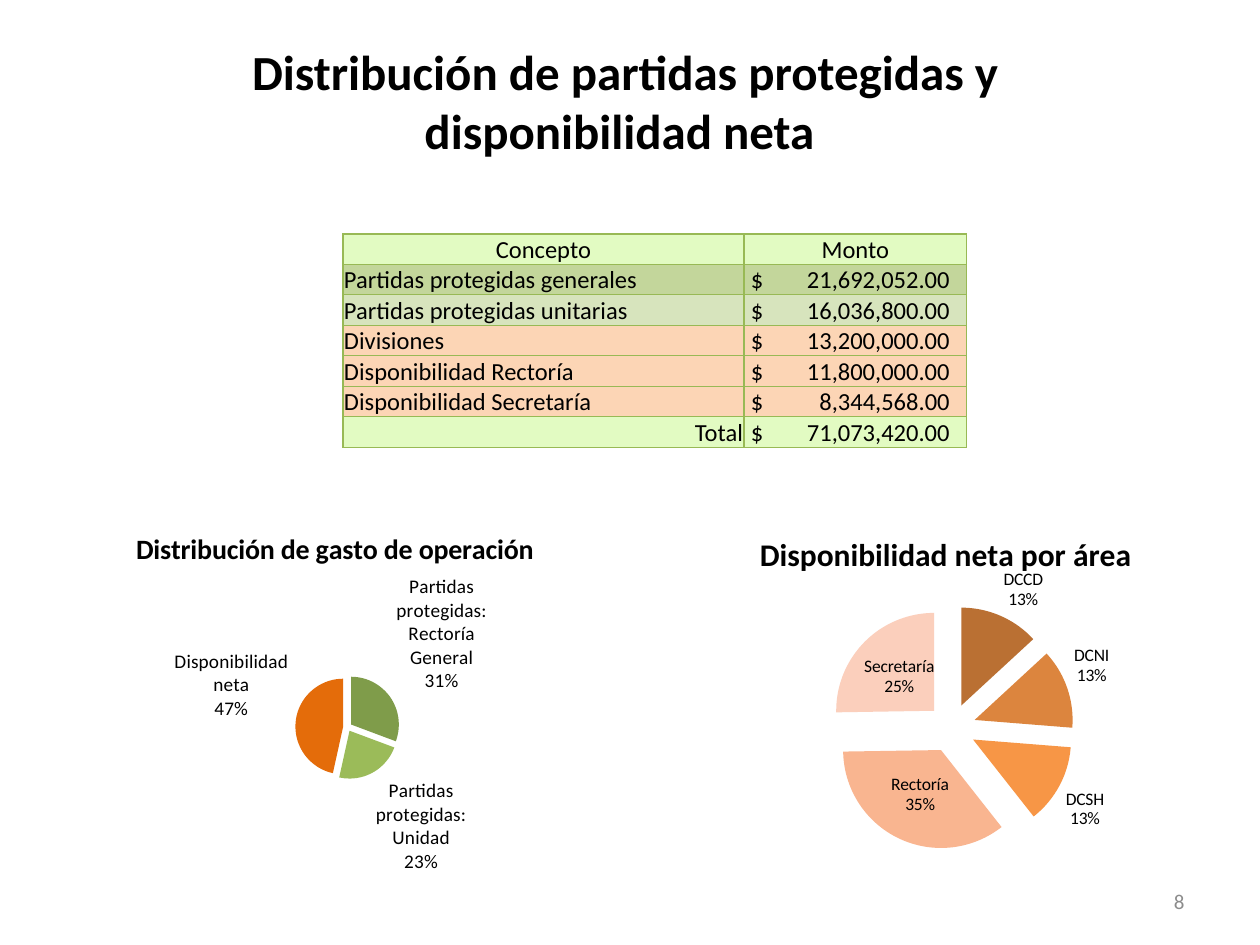
from pptx import Presentation
from pptx.chart.data import CategoryChartData
from pptx.dml.color import RGBColor
from pptx.enum.chart import XL_CHART_TYPE, XL_LABEL_POSITION
from pptx.enum.text import MSO_ANCHOR, PP_ALIGN
from pptx.oxml import parse_xml
from pptx.oxml.ns import nsdecls, qn
from pptx.util import Pt
from lxml import etree

PX = 914400 // 126
LEFT, CENTER, RIGHT = PP_ALIGN.LEFT, PP_ALIGN.CENTER, PP_ALIGN.RIGHT
MIDDLE, BOTTOM = MSO_ANCHOR.MIDDLE, MSO_ANCHOR.BOTTOM
OUTSIDE, INSIDE = XL_LABEL_POSITION.OUTSIDE_END, XL_LABEL_POSITION.CENTER
FONT = "Calibri"
C = {
    "black": "000000", "grey": "8C8C8C", "border": "98B955",
    "pale": "E2FBC2", "green": "C3D69B", "sage": "D7E4BD", "peach": "FCD5B5",
}


def style(font, size, color="black", bold=False):
    font.name, font.size, font.bold = FONT, Pt(size), bold
    font.color.rgb = RGBColor.from_string(C[color])


def layout(frame, x, y, w=0, h=0):
    """Manual chart layout from slide px, as fractions of the chart frame."""
    fx, fy, fw, fh = frame
    parts = [("x", (x - fx) / fw), ("y", (y - fy) / fh)]
    if w:
        parts += [("w", w / fw), ("h", h / fh)]
    target = '<c:layoutTarget val="inner"/>' if w else ""
    modes = '<c:xMode val="edge"/><c:yMode val="edge"/>'
    values = "".join(f'<c:{k} val="{v:.3f}"/>' for k, v in parts)
    return parse_xml(f'<c:layout {nsdecls("c")}><c:manualLayout>{target}{modes}{values}'
                     '</c:manualLayout></c:layout>')


prs = Presentation()
prs.slide_width, prs.slide_height = 1260 * PX, 945 * PX
s = prs.slides.add_slide(prs.slide_layouts[6])

# Title and page number
for text, box, size, color, bold, align, top in [
    ("Distribución de partidas protegidas y disponibilidad neta ",
     (94, 20, 1062, 145), 28, "black", True, CENTER, 21),
    ("8", (903, 876, 294, 50), 12, "grey", False, RIGHT, 6),
]:
    tf = s.shapes.add_textbox(*[v * PX for v in box]).text_frame
    tf.word_wrap = True
    tf.vertical_anchor = MIDDLE
    tf.margin_top, tf.margin_bottom = top * PX, 6 * PX
    p = tf.paragraphs[0]
    p.text, p.alignment = text, align
    style(p.font, size, color, bold)

# Table of amounts
rows = [
    ("Concepto", "Monto", "pale"),
    ("Partidas protegidas generales", "21,692,052.00", "green"),
    ("Partidas protegidas unitarias", "16,036,800.00", "sage"),
    ("Divisiones", "13,200,000.00", "peach"),
    ("Disponibilidad Rectoría", "11,800,000.00", "peach"),
    ("Disponibilidad Secretaría", "8,344,568.00", "peach"),
    ("Total", "71,073,420.00", "pale"),
]
table = s.shapes.add_table(len(rows), 2, 343 * PX, 234 * PX, 624 * PX, 210 * PX).table
for col, width in zip(table.columns, (401, 223)):
    col.width = width * PX
for i, (concept, amount, fill) in enumerate(rows):
    table.rows[i].height = 30 * PX
    for j, text in enumerate((concept, amount)):
        cell = table.cell(i, j)
        money = i > 0 and j == 1
        cell.margin_left = (7 if money else 1) * PX
        cell.margin_right = cell.margin_top = PX
        cell.margin_bottom = 0
        cell.vertical_anchor = BOTTOM
        cell.fill.solid()
        cell.fill.fore_color.rgb = RGBColor.from_string(C[fill])
        p = cell.text_frame.paragraphs[0]
        p.text = f"$\t{text}" if money else text
        p.alignment = CENTER if i == 0 else RIGHT if concept == text == "Total" else LEFT
        if money:
            tabs = etree.SubElement(p._p.get_or_add_pPr(), qn("a:tabLst"))
            etree.SubElement(tabs, qn("a:tab"), pos=str(199 * PX), algn="r")
        style(p.font, 14)
        for k, side in enumerate(("lnL", "lnR", "lnT", "lnB")):
            cell._tc.get_or_add_tcPr().insert(k, parse_xml(
                f'<a:{side} {nsdecls("a")} w="9525"><a:solidFill>'
                f'<a:srgbClr val="{C["border"]}"/></a:solidFill></a:{side}>'))

# Pie charts: frame, title, title place, pie box, label size, explosion, slices
pies = [
    ((15, 503, 630, 378), "Distribución de gasto de operación", 16, (131, 525),
     (300, 679, 96, 96), 11, 9, [
         ("Partidas protegidas: Rectoría General", 31, "7F9C4A", OUTSIDE),
         ("Partidas protegidas: Unidad", 23, "9BBB59", OUTSIDE),
         ("Disponibilidad neta", 47, "E46C0A", OUTSIDE)]),
    ((625, 503, 630, 378), "Disponibilidad neta por área", 18, (754, 527),
     (854, 630, 196, 196), 10, 25, [
         ("DCCD", 13, "BA7033", OUTSIDE), ("DCNI", 13, "DC853E", OUTSIDE),
         ("DCSH", 13, "F79646", OUTSIDE), ("Rectoría", 35, "F9B590", INSIDE),
         ("Secretaría", 25, "FBCFBC", INSIDE)]),
]
for frame, title, title_size, title_at, pie_box, size, explosion, slices in pies:
    data = CategoryChartData()
    data.categories = [name for name, *_ in slices]
    data.add_series("Series 1", [value for _, value, *_ in slices])
    chart = s.shapes.add_chart(XL_CHART_TYPE.PIE, *[v * PX for v in frame], data).chart
    chart.has_legend = False
    style(chart.font, size)

    chart.has_title = True
    tf = chart.chart_title.text_frame
    tf.text = title
    style(tf.paragraphs[0].font, title_size, bold=True)
    plot = chart.plots[0]
    title_el = chart.chart_title._element
    area = plot._element.getparent()
    for el in (title_el, area):
        for old in el.findall(qn("c:layout")):
            el.remove(old)
    title_el.find(qn("c:tx")).addnext(layout(frame, *title_at))
    area.insert(0, layout(frame, *pie_box))

    plot.vary_by_categories = True
    for i, (_, _, color, place) in enumerate(slices):
        point = plot.series[0].points[i]
        fill = point.format.fill
        fill.solid()
        fill.fore_color.rgb = RGBColor.from_string(color)
        for dpt in plot.series[0]._element.findall(qn("c:dPt")):
            if dpt.find(qn("c:explosion")) is None:
                dpt.find(qn("c:spPr")).addprevious(
                    parse_xml(f'<c:explosion {nsdecls("c")} val="{explosion}"/>'))
        label = point.data_label
        style(label.font, size)
        label.position = place
        dlbl = label._dLbl
        for tag, shown in (("showVal", 0), ("showCatName", 1), ("showPercent", 1)):
            dlbl.find(qn(f"c:{tag}")).set("val", str(shown))
        dlbl.find(qn("c:showLegendKey")).set("val", "0")
        etree.SubElement(dlbl, qn("c:separator")).text = "\n"

prs.save("out.pptx")
